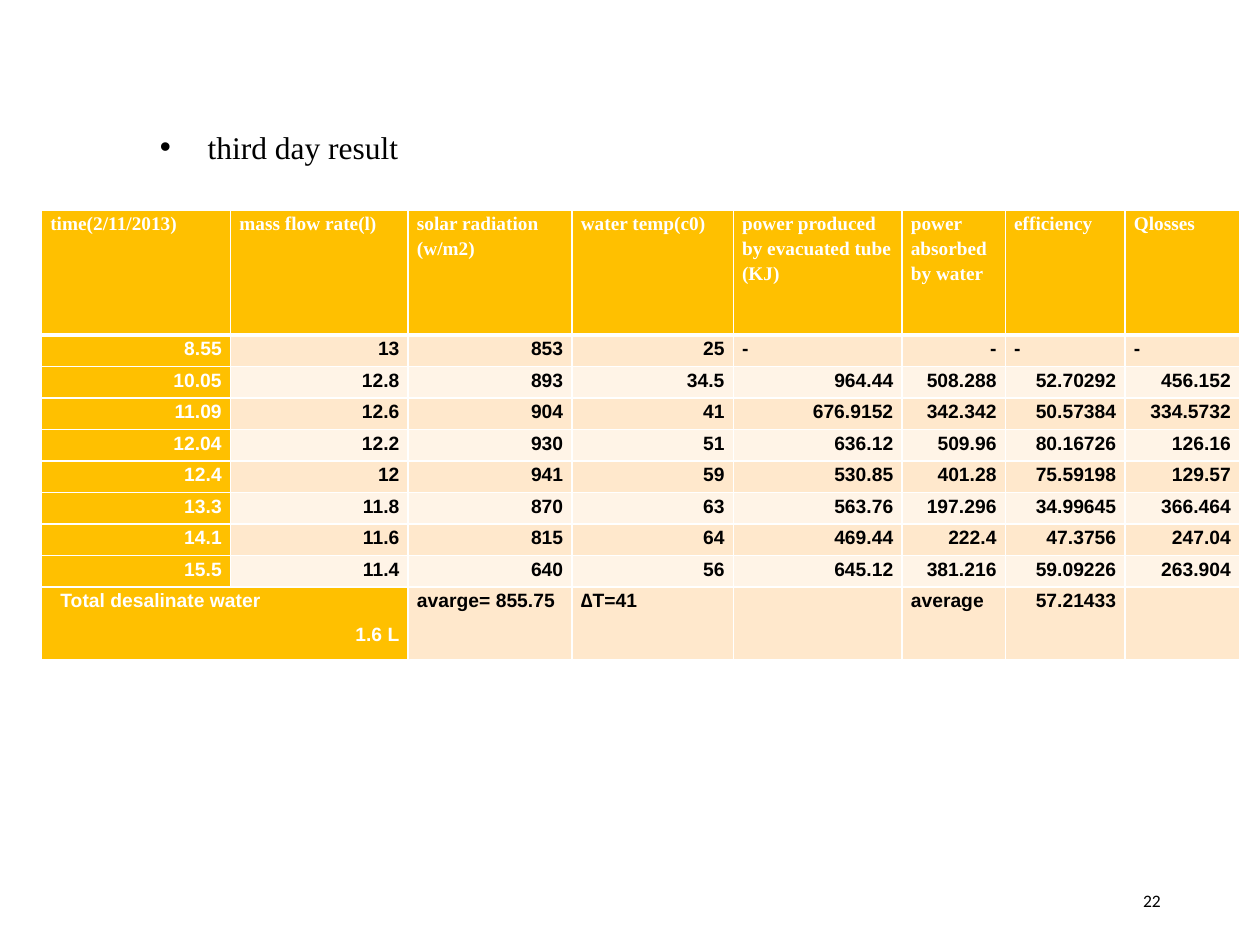
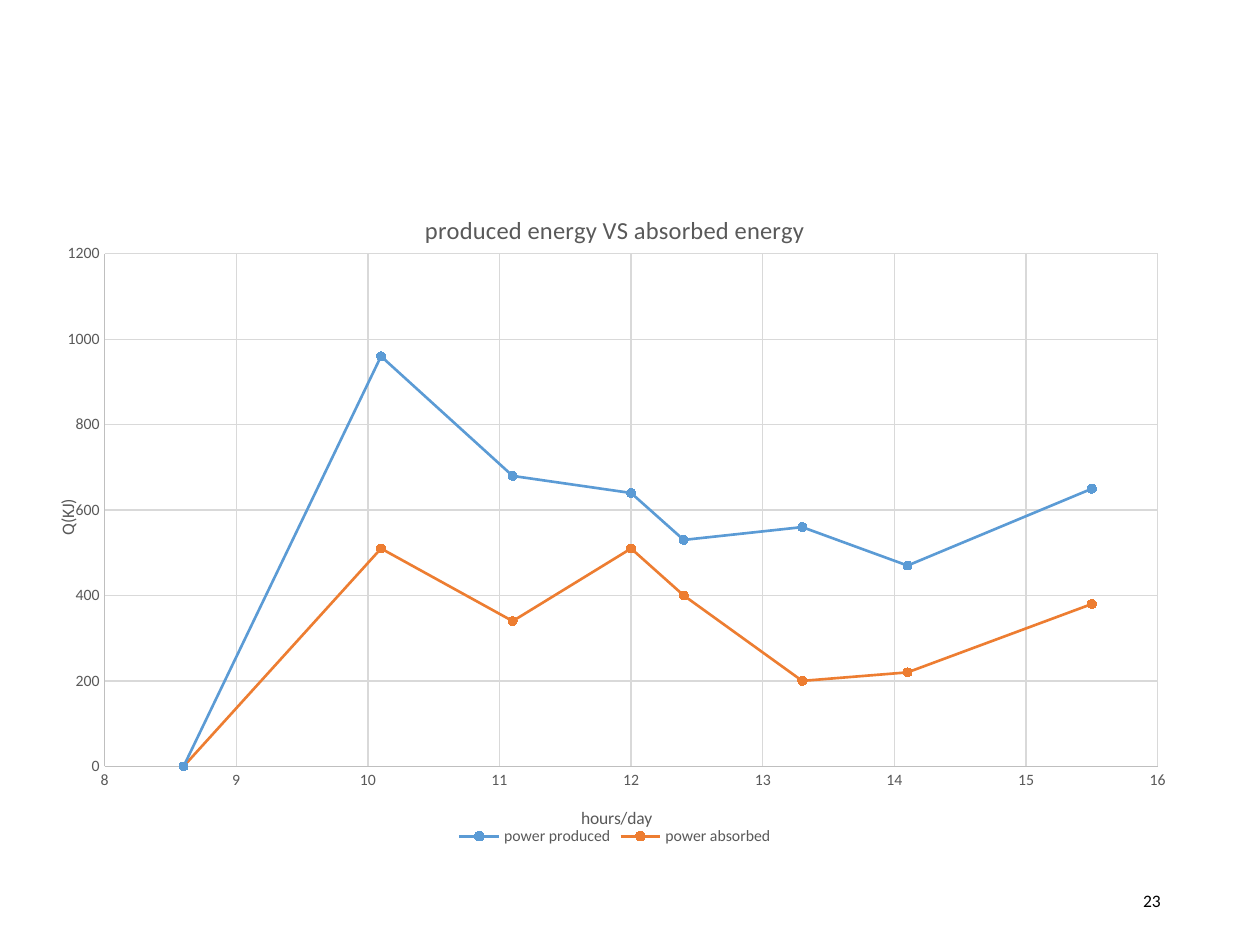
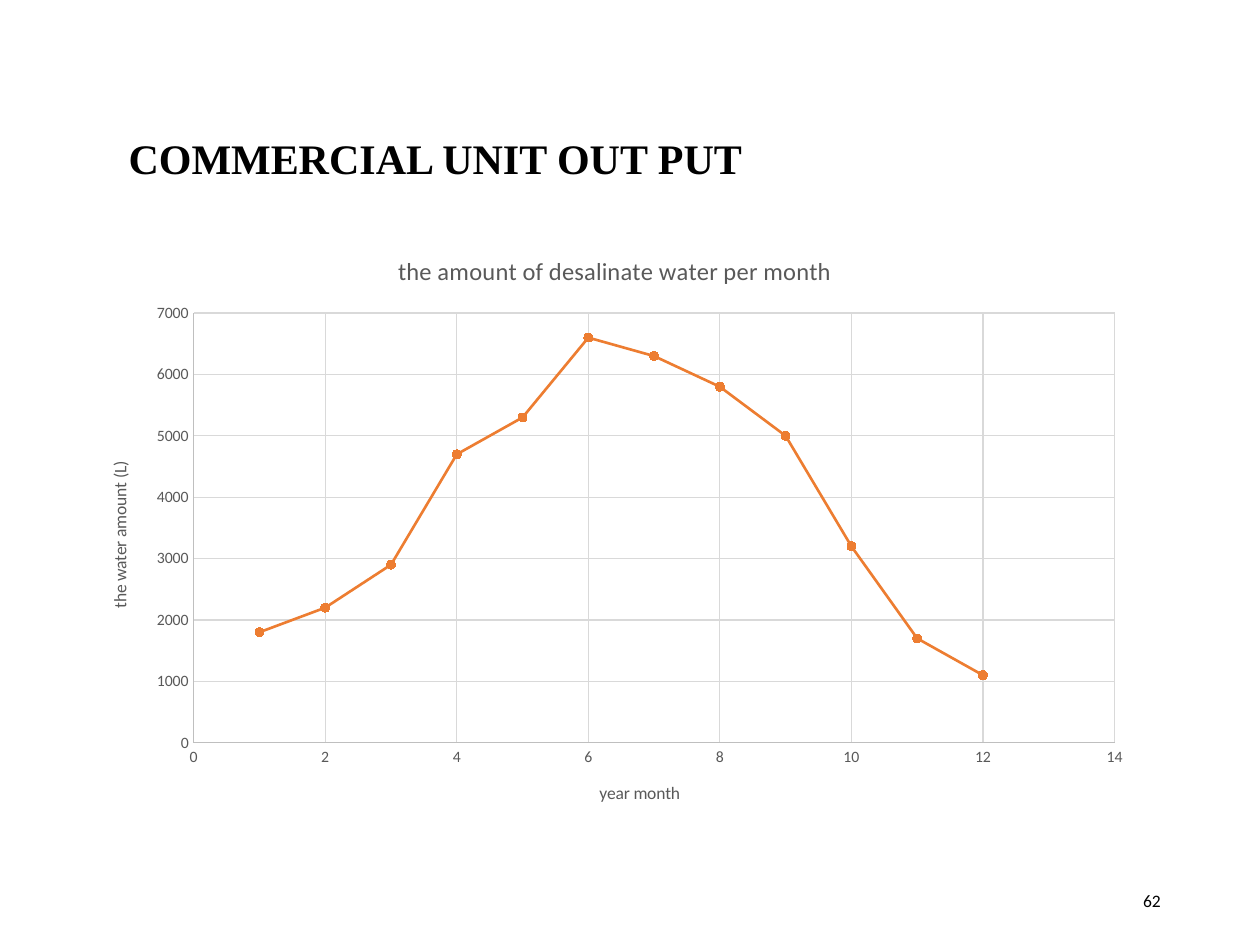
from lxml.etree import SubElement
from pptx import Presentation
from pptx.chart.data import XyChartData
from pptx.dml.color import RGBColor
from pptx.enum.chart import XL_CHART_TYPE as ChartType, XL_LEGEND_POSITION as LegendPosition
from pptx.enum.chart import XL_MARKER_STYLE as MarkerStyle, XL_TICK_MARK as TickMark
from pptx.enum.text import MSO_ANCHOR as Anchor, MSO_AUTO_SIZE as AutoSize, PP_ALIGN as Align
from pptx.oxml.ns import qn
from pptx.util import Inches, Pt

# Shared look
WHITE = RGBColor(0xFF, 0xFF, 0xFF)
BLACK = RGBColor(0x00, 0x00, 0x00)
AMBER = RGBColor(0xFF, 0xC0, 0x00)
BAND_DARK = RGBColor(0xFF, 0xE8, 0xCC)
BAND_LIGHT = RGBColor(0xFF, 0xF4, 0xE7)
BLUE = RGBColor(0x5B, 0x9B, 0xD5)
ORANGE = RGBColor(0xED, 0x7D, 0x31)
CHART_TEXT = RGBColor(0x59, 0x59, 0x59)
AXIS_GREY = RGBColor(0xBF, 0xBF, 0xBF)
GRID_GREY = RGBColor(0xD9, 0xD9, 0xD9)
SERIF, SANS, BODY = "Times New Roman", "Arial", "Calibri"
TITLE_ONLY, BLANK = 5, 6

# Content
RESULT_HEADING = "third day result"
RESULT_ROWS = [
    ["time(2/11/2013)", "mass flow rate(l)", "solar radiation (w/m2)", "water temp(c0)",
     "power produced by evacuated tube (KJ)", "power absorbed by water", "efficiency", "Qlosses"],
    ["8.55", "13", "853", "25", "-", "-", "-", "-"],
    ["10.05", "12.8", "893", "34.5", "964.44", "508.288", "52.70292", "456.152"],
    ["11.09", "12.6", "904", "41", "676.9152", "342.342", "50.57384", "334.5732"],
    ["12.04", "12.2", "930", "51", "636.12", "509.96", "80.16726", "126.16"],
    ["12.4", "12", "941", "59", "530.85", "401.28", "75.59198", "129.57"],
    ["13.3", "11.8", "870", "63", "563.76", "197.296", "34.99645", "366.464"],
    ["14.1", "11.6", "815", "64", "469.44", "222.4", "47.3756", "247.04"],
    ["15.5", "11.4", "640", "56", "645.12", "381.216", "59.09226", "263.904"],
    ["Total desalinate water\n1.6 L", "", "avarge= 855.75", "∆T=41", "", "average", "57.21433", ""],
]
COLUMN_WIDTHS = [1.5, 1.41, 1.3, 1.28, 1.34, 0.82, 0.95, 0.91]
HEADER_HEIGHT, ROW_HEIGHT, TOTAL_HEIGHT = 0.99, 0.25, 0.58
RIGHT_DASH = (1, 5)

HOURS = [8.6, 10.1, 11.1, 12, 12.4, 13.3, 14.1, 15.5]
ENERGY_CHART = {
    "title": "produced energy VS absorbed energy",
    "area": (0.42, 1.5, 8.92, 5.25),
    "plot": (0.046, 0.098, 0.937, 0.775),
    "x_axis": ("hours/day", 8, 16, 1),
    "y_axis": ("Q(KJ)", 0, 1200, 200),
    "legend": True,
    "series": [
        ("power produced", BLUE, HOURS, [0, 960, 680, 640, 530, 560, 470, 650]),
        ("power absorbed", ORANGE, HOURS, [0, 510, 340, 510, 400, 200, 220, 380]),
    ],
}
OUTPUT_TITLE = "COMMERCIAL UNIT OUT PUT"
WATER_CHART = {
    "title": "the amount of desalinate water per month",
    "area": (0.67, 1.83, 8.42, 4.75),
    "plot": (0.103, 0.138, 0.868, 0.718),
    "x_axis": ("year month", 0, 14, 2),
    "y_axis": ("the water amount (L)", 0, 7000, 1000),
    "legend": False,
    "series": [
        ("Series 1", ORANGE, range(1, 13),
         [1800, 2200, 2900, 4700, 5300, 6600, 6300, 5800, 5000, 3200, 1700, 1100]),
    ],
}


def inches(*lengths):
    return [Inches(length) for length in lengths]


def style_font(font, size, color, name=BODY, bold=False):
    font.size, font.name, font.bold = Pt(size), name, bold
    font.color.rgb = color


def style_line(line, color, width):
    line.color.rgb = color
    line.width = Pt(width)


def add_text(page, text, area, size, name):
    box = page.shapes.add_textbox(*inches(*area))
    box.text_frame.word_wrap = True
    para = box.text_frame.paragraphs[0]
    para.text = text
    style_font(para.runs[0].font, size, BLACK, name)
    return box, para


def add_page(deck, layout, number):
    page = deck.slides.add_slide(deck.slide_layouts[layout])
    box, para = add_text(page, str(number), (7.06, 6.95, 2.25, 0.4), 10, BODY)
    box.text_frame.vertical_anchor = Anchor.MIDDLE
    para.alignment = Align.RIGHT
    return page


def add_bullet_heading(page, text):
    _, para = add_text(page, text, (1.17, 0.92, 2.6, 0.45), 18, SERIF)
    para.line_spacing, para.space_before, para.space_after = 1.15, Pt(5), Pt(10)
    props = para._p.get_or_add_pPr()
    props.set("marL", str(Inches(0.38)))
    props.set("indent", str(-Inches(0.38)))
    SubElement(props, qn("a:buFont")).set("typeface", SANS)
    SubElement(props, qn("a:buChar")).set("char", "•")


# Results table
def set_borders(cell, top, bottom):
    props = cell._tc.get_or_add_tcPr()
    for side, width in (("L", 1), ("R", 1), ("T", top), ("B", bottom)):
        line = SubElement(props, qn(f"a:ln{side}"), w=str(Pt(width)))
        fill = SubElement(line, qn("a:solidFill"))
        SubElement(fill, qn("a:srgbClr")).set("val", str(WHITE))


def is_number(text):
    return text.replace(".", "").isdigit()


def fill_cell(cell, text, row, column):
    last = len(RESULT_ROWS) - 1
    amber = row == 0 or column == 0 or (row, column) == (last, 1)
    set_borders(cell, top=3 if row == 1 else 1, bottom=3 if row == 0 else 1)
    cell.fill.solid()
    cell.fill.fore_color.rgb = AMBER if amber else BAND_DARK if row % 2 else BAND_LIGHT
    cell.margin_left = cell.margin_right = Inches(0.07)
    cell.margin_top = cell.margin_bottom = 0
    cell.text_frame.text = text
    for para in cell.text_frame.paragraphs:
        right = is_number(para.text) or (row, column) == RIGHT_DASH
        para.alignment = Align.RIGHT if right else Align.LEFT
        para.line_spacing, para.space_before = 1.15, Pt(5)
        style_font(para.font, 11, BLACK, SANS, True)
        for span in para.runs:
            style_font(span.font, 11, WHITE if amber else BLACK, SANS if row else SERIF, True)


def add_results_table(page):
    middle_rows = len(RESULT_ROWS) - 2
    heights = [HEADER_HEIGHT] + [ROW_HEIGHT] * middle_rows + [TOTAL_HEIGHT]
    area = inches(0.33, 1.67, sum(COLUMN_WIDTHS), sum(heights))
    table = page.shapes.add_table(len(heights), len(COLUMN_WIDTHS), *area).table
    for column, width in zip(table.columns, COLUMN_WIDTHS):
        column.width = Inches(width)
    for row, height in zip(table.rows, heights):
        row.height = Inches(height)
    for row, texts in enumerate(RESULT_ROWS):
        for column, text in enumerate(texts):
            fill_cell(table.cell(row, column), text, row, column)

    # The total spans two columns: label indented, amount at the right
    total = table.cell(len(heights) - 1, 0)
    total.merge(table.cell(len(heights) - 1, 1))
    label, amount = total.text_frame.paragraphs
    label._p.get_or_add_pPr().set("marL", str(Inches(0.08)))
    amount.alignment = Align.RIGHT


# Scatter charts
def set_title(owner, text, size):
    owner.has_title = True
    title = owner.chart_title if hasattr(owner, "chart_title") else owner.axis_title
    title.text_frame.text = text
    style_font(title.text_frame.paragraphs[0].runs[0].font, size, CHART_TEXT)


def style_axis(axis, title, low, high, step):
    axis.minimum_scale, axis.maximum_scale, axis.major_unit = low, high, step
    axis.major_tick_mark = axis.minor_tick_mark = TickMark.NONE
    axis.has_major_gridlines = True
    style_line(axis.major_gridlines.format.line, GRID_GREY, 0.75)
    style_line(axis.format.line, AXIS_GREY, 0.75)
    style_font(axis.tick_labels.font, 9, CHART_TEXT)
    set_title(axis, title, 10)


def set_plot_area(chart, shares):
    plot_area = chart._chartSpace.chart.plotArea
    for old in plot_area.findall(qn("c:layout")):
        plot_area.remove(old)
    layout = plot_area.makeelement(qn("c:layout"))
    plot_area.insert(0, layout)
    manual = SubElement(layout, qn("c:manualLayout"))
    settings = [("layoutTarget", "inner"), ("xMode", "edge"), ("yMode", "edge")]
    for tag, value in settings + list(zip("xywh", shares)):
        SubElement(manual, qn(f"c:{tag}")).set("val", str(value))


def add_scatter(page, content):
    data = XyChartData()
    for name, _, xs, ys in content["series"]:
        series = data.add_series(name)
        for x, y in zip(xs, ys):
            series.add_data_point(x, y)
    area = inches(*content["area"])
    chart = page.shapes.add_chart(ChartType.XY_SCATTER_LINES, *area, data).chart
    style_font(chart.font, 10, BLACK)
    set_title(chart, content["title"], 14)
    style_axis(chart.category_axis, *content["x_axis"])
    style_axis(chart.value_axis, *content["y_axis"])
    set_plot_area(chart, content["plot"])
    chart.plots[0].vary_by_categories = False
    for series, (_, color, _, _) in zip(chart.plots[0].series, content["series"]):
        series.smooth = False
        style_line(series.format.line, color, 1.5)
        marker = series.marker
        marker.style, marker.size = MarkerStyle.CIRCLE, 5
        marker.format.fill.solid()
        marker.format.fill.fore_color.rgb = color
        style_line(marker.format.line, color, 0.75)
    chart.has_legend = content["legend"]
    if chart.has_legend:
        chart.legend.position = LegendPosition.BOTTOM
        chart.legend.include_in_layout = False
        style_font(chart.legend.font, 9, CHART_TEXT)


def set_page_title(page, text):
    title = page.shapes.title
    title.left, title.top, title.width, title.height = inches(0.92, 1, 5.12, 0.51)
    frame = title.text_frame
    frame.text = text
    frame.word_wrap, frame.auto_size = False, AutoSize.NONE
    frame.vertical_anchor = Anchor.TOP
    para = frame.paragraphs[0]
    para.alignment = Align.LEFT
    style_font(para.runs[0].font, 24, BLACK, SERIF, True)


def main():
    deck = Presentation()
    deck.slide_width, deck.slide_height = inches(10, 7.5)

    # Third day measurements
    page = add_page(deck, BLANK, 22)
    add_results_table(page)
    add_bullet_heading(page, RESULT_HEADING)

    # Energy over the day
    add_scatter(add_page(deck, BLANK, 23), ENERGY_CHART)

    # Water over the year
    page = add_page(deck, TITLE_ONLY, 62)
    set_page_title(page, OUTPUT_TITLE)
    add_scatter(page, WATER_CHART)

    deck.save("out.pptx")


if __name__ == "__main__":
    main()
